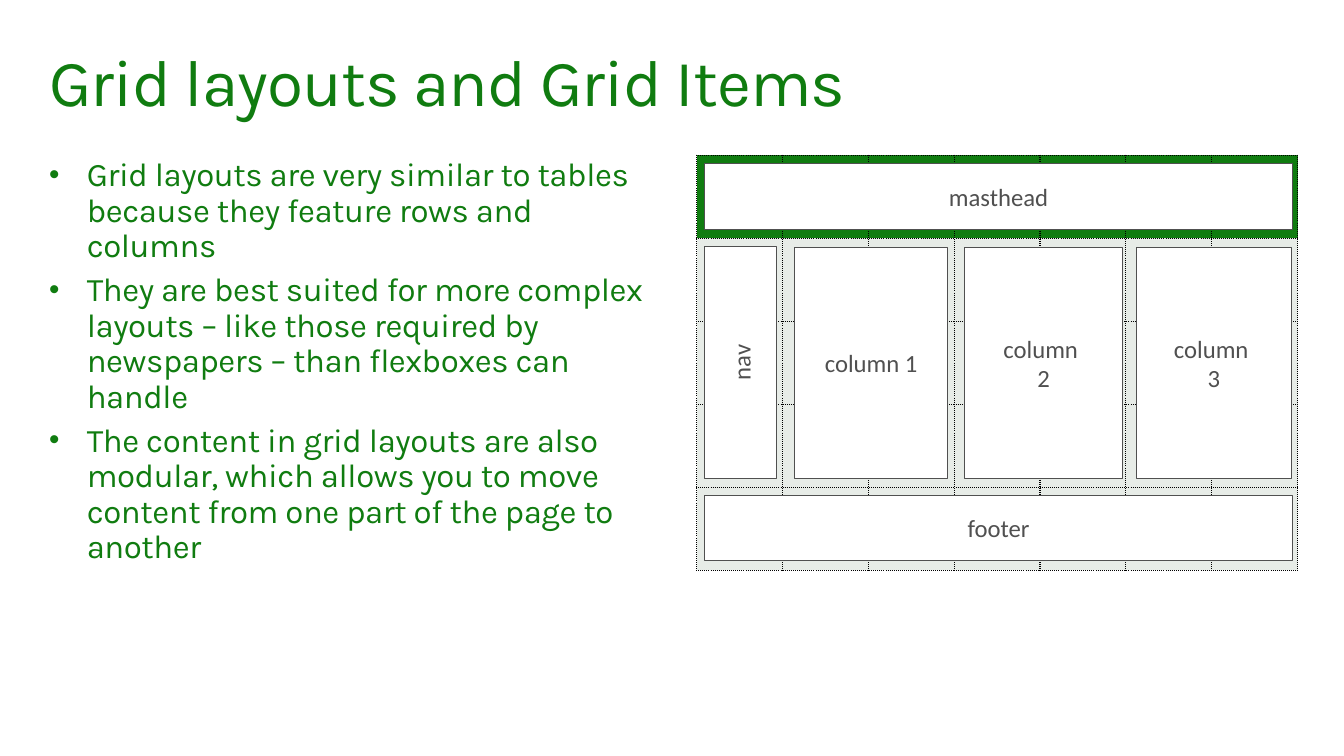
from lxml import etree
from pptx import Presentation
from pptx.dml.color import RGBColor
from pptx.enum import shapes, text
from pptx.oxml import ns
from pptx.util import Inches, Pt

GREEN = RGBColor(0x10, 0x7C, 0x10)
PALE = RGBColor(0xE7, 0xEC, 0xE7)
GRAY = RGBColor(0x50, 0x50, 0x50)
WHITE = RGBColor(0xFF, 0xFF, 0xFF)

POINTS = [
    "Grid layouts are very similar to tables because they feature rows and columns",
    "They are best suited for more complex layouts – like those required by "
    "newspapers – than flexboxes can handle",
    "The content in grid layouts are also modular, which allows you to move "
    "content from one part of the page to another",
]
ROWS, COLUMNS = 5, 7

# Page areas: label, then left, top, width, height within the grid
AREAS = [
    ("masthead", 0.08, 0.09, 5.95, 0.66),
    ("nav", 0.08, 0.92, 0.73, 2.35),
    ("column 1", 0.99, 0.94, 1.55, 2.33),
    ("column \n2", 2.71, 0.94, 1.6, 2.33),
    ("column \n3", 4.45, 0.94, 1.57, 2.33),
    ("footer", 0.08, 3.44, 5.95, 0.66),
]


def add_child(parent, tag, **attributes):
    return etree.SubElement(parent, ns.qn(tag), attributes)


def style_runs(paragraph, font, size, color, spacing=0):
    for run in paragraph.runs:
        run.font.name = font
        run.font.size = Pt(size)
        run.font.color.rgb = color
        if spacing:
            run._r.get_or_add_rPr().set("spc", str(spacing))


def add_copy(slide, left, top, width, height, lines):
    box = slide.shapes.add_textbox(
        Inches(left), Inches(top), Inches(width), Inches(height))
    frame = box.text_frame
    frame.word_wrap = True
    frame.margin_left = frame.margin_right = Inches(0.1)
    frame.margin_top = frame.margin_bottom = Inches(0.1)
    frame.text = "\n".join(lines)
    for paragraph in frame.paragraphs:
        paragraph.line_spacing = 0.9
    return frame.paragraphs


def add_title(slide, left, top, width, height):
    for paragraph in add_copy(slide, left, top, width, height,
                              ["Grid layouts and Grid Items"]):
        style_runs(paragraph, "Karla", 48, GREEN, -70)


def add_points(slide, left, top, width, height):
    for index, paragraph in enumerate(
            add_copy(slide, left, top, width, height, POINTS)):
        if index:
            paragraph.space_before = Pt(6)
        properties = paragraph._p.get_or_add_pPr()
        properties.set("marL", str(Inches(0.38)))
        properties.set("indent", str(-Inches(0.38)))
        add_child(properties, "a:buSzPct", val="90000")
        add_child(properties, "a:buFont", typeface="Arial")
        add_child(properties, "a:buChar", char="•")
        style_runs(paragraph, "Karla", 24, GREEN, -30)


def add_dotted_borders(cell):
    properties = cell._tc.get_or_add_tcPr()
    for side in ("a:lnL", "a:lnR", "a:lnT", "a:lnB"):
        line = add_child(properties, side, w=str(Pt(1)))
        add_child(add_child(line, "a:solidFill"), "a:srgbClr", val="000000")
        add_child(line, "a:prstDash", val="sysDot")


def add_area(slide, label, left, top, width, height):
    area = slide.shapes.add_shape(
        shapes.MSO_SHAPE.RECTANGLE,
        Inches(left), Inches(top), Inches(width), Inches(height))
    area.shadow.inherit = False
    area.fill.solid()
    area.fill.fore_color.rgb = WHITE
    area.line.color.rgb = GRAY
    area.line.width = Pt(0.75)
    frame = area.text_frame
    frame.text = label
    frame.word_wrap = True
    frame.vertical_anchor = text.MSO_ANCHOR.MIDDLE
    for paragraph in frame.paragraphs:
        paragraph.alignment = text.PP_ALIGN.CENTER
        style_runs(paragraph, "Calibri", 18, GRAY)
    if label == "nav":
        frame._txBody.bodyPr.set("vert", "vert270")


def add_page_grid(slide, left, top, width, height):
    # Dotted grid with a green top row
    grid = slide.shapes.add_table(
        ROWS, COLUMNS,
        Inches(left), Inches(top), Inches(width), Inches(height)).table
    grid.first_row = grid.horz_banding = False
    for column in grid.columns:
        column.width = Inches(width / COLUMNS)
    for index, row in enumerate(grid.rows):
        row.height = Inches(height / ROWS)
        for cell in row.cells:
            add_dotted_borders(cell)
            cell.fill.solid()
            cell.fill.fore_color.rgb = PALE if index else GREEN

    # Areas laid over the grid
    for label, x, y, area_width, area_height in AREAS:
        add_area(slide, label, left + x, top + y, area_width, area_height)


def main():
    deck = Presentation()
    deck.slide_width = Inches(13.6)
    deck.slide_height = Inches(7.65)
    slide = deck.slides.add_slide(deck.slide_layouts[6])
    add_title(slide, 0.4, 0.4, 12.8, 1)
    add_points(slide, 0.4, 1.5, 6.4, 4.01)
    add_page_grid(slide, 7.05, 1.57, 6.08, 4.2)
    deck.save("out.pptx")


if __name__ == "__main__":
    main()
